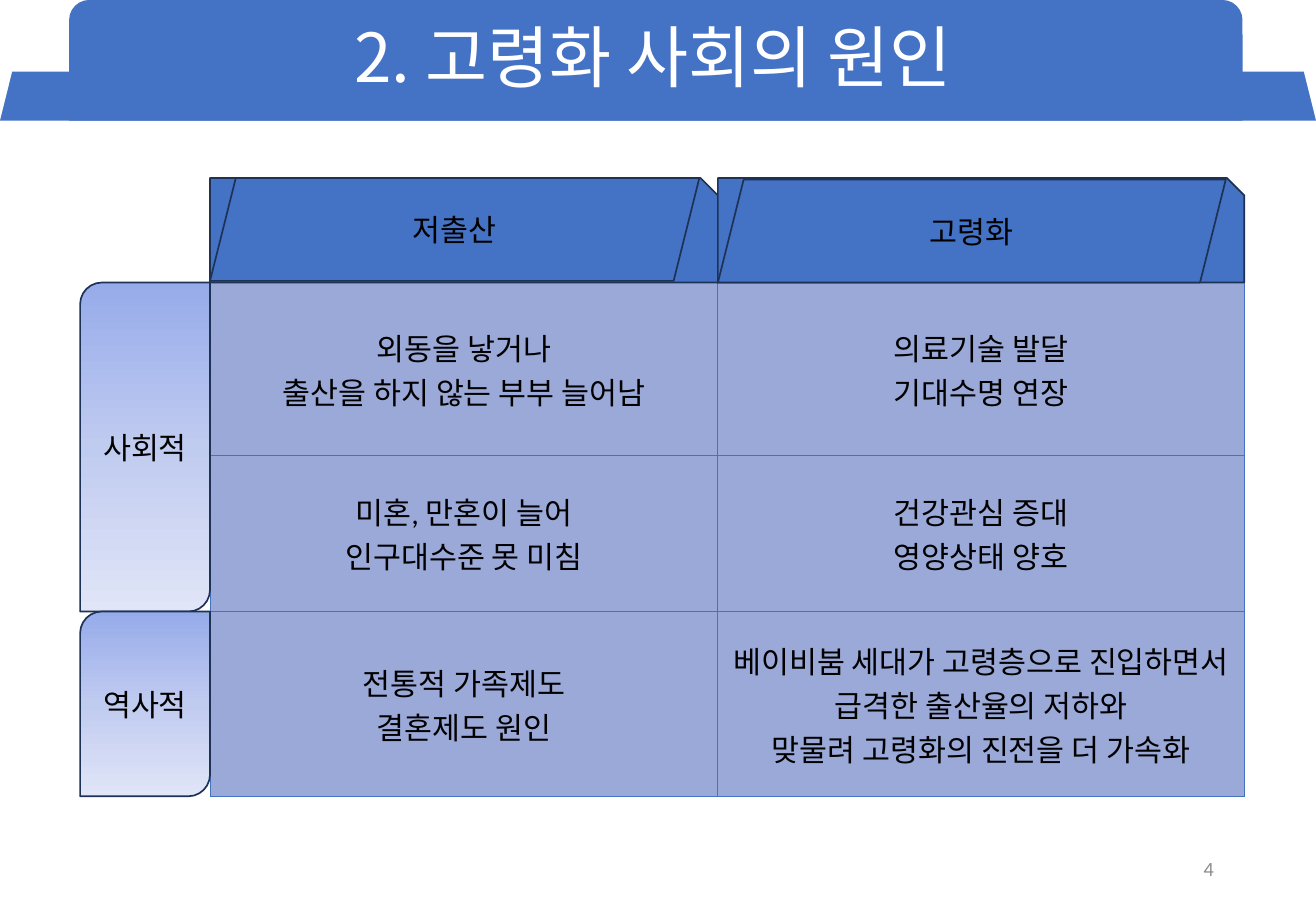
from copy import deepcopy

from lxml import etree
from pptx import Presentation
from pptx.dml.color import RGBColor
from pptx.enum.shapes import MSO_SHAPE
from pptx.enum.text import MSO_ANCHOR, PP_ALIGN
from pptx.oxml.ns import qn
from pptx.util import Pt

BLUE = RGBColor(0x44, 0x72, 0xC4)
NAVY = RGBColor(0x1E, 0x32, 0x56)
PERIWINKLE = RGBColor(0x9B, 0xA9, 0xD9)
WHITE = RGBColor(0xFF, 0xFF, 0xFF)
BLACK = RGBColor(0, 0, 0)
GRAY = RGBColor(0x8C, 0x8C, 0x8C)
LABEL_STOPS = [
    (0, RGBColor(0x96, 0xAB, 0xEA)),
    (0.5, RGBColor(0xC0, 0xCB, 0xF0)),
    (1, RGBColor(0xE0, 0xE5, 0xF7)),
]
KOREAN = "Noto Sans CJK KR"
LATIN = "Calibri"
CENTER, RIGHT = PP_ALIGN.CENTER, PP_ALIGN.RIGHT
MIDDLE = MSO_ANCHOR.MIDDLE
TRAPEZOID = MSO_SHAPE.TRAPEZOID
ROUND_TOP = MSO_SHAPE.ROUND_2_SAME_RECTANGLE
SNIP = MSO_SHAPE.SNIP_1_RECTANGLE
PARALLELOGRAM = MSO_SHAPE.PARALLELOGRAM
ROUND_DIAGONAL = MSO_SHAPE.ROUND_2_DIAG_RECTANGLE

TABLE_LEFT, TABLE_TOP = 124.5, 167.5
COLUMN_WIDTHS = [301, 312]
ROW_HEIGHTS = [102.5, 92.5, 109.5]
HEADER_TOP, HEADER_HEIGHT = 105.5, 62
LABEL_LEFT, LABEL_WIDTH = 47.5, 77

CAUSES = [
    ["외동을 낳거나\n출산을 하지 않는 부부 늘어남", "의료기술 발달\n기대수명 연장"],
    ["미혼, 만혼이 늘어\n인구대수준 못 미침", "건강관심 증대\n영양상태 양호"],
    ["전통적 가족제도\n결혼제도 원인",
     "베이비붐 세대가 고령층으로 진입하면서 급격한 출산율의 저하와\n맞물려 고령화의 진전을 더 가속화"],
]


def write(frame, text, size=18, font=KOREAN, color=BLACK, align=CENTER, spacing=1.0):
    frame.text = text
    frame.word_wrap = True
    for paragraph in frame.paragraphs:
        paragraph.alignment = align
        paragraph.line_spacing = spacing
        for run in paragraph.runs:
            run.font.size = Pt(size)
            run.font.name = font
            run.font.color.rgb = color
            east_asian = etree.Element(qn("a:ea"), typeface=KOREAN)
            run.font._element.find(qn("a:latin")).addnext(east_asian)


def add_block(kind, left, top, width, height, line=NAVY):
    block = slide.shapes.add_shape(kind, Pt(left), Pt(top), Pt(width), Pt(height))
    block.shadow.inherit = False
    block.fill.solid()
    block.fill.fore_color.rgb = BLUE
    block.line.width = Pt(1)
    if line is None:
        block.line.fill.background()
    else:
        block.line.color.rgb = line
    block.text_frame.vertical_anchor = MIDDLE
    return block


prs = Presentation()
prs.slide_width, prs.slide_height = Pt(780), Pt(540)
slide = prs.slides.add_slide(prs.slide_layouts[5])

title = slide.shapes.title
title.left, title.top, title.width, title.height = Pt(47.5), Pt(0), Pt(679), Pt(71.5)
title.text_frame.vertical_anchor = MIDDLE
write(title.text_frame, "2. 고령화 사회의 원인", size=40, color=WHITE, spacing=0.9)

ribbon = add_block(TRAPEZOID, 0, 42.5, 780, 29, line=None)
banner = add_block(ROUND_TOP, 41, 0, 695.5, 71.5, line=None)
for backdrop in (ribbon, banner):
    title._element.addprevious(backdrop._element)

causes_frame = slide.shapes.add_table(
    len(ROW_HEIGHTS), len(COLUMN_WIDTHS), Pt(TABLE_LEFT), Pt(TABLE_TOP),
    Pt(sum(COLUMN_WIDTHS)), Pt(sum(ROW_HEIGHTS)))
causes = causes_frame.table
causes.first_row = causes.horz_banding = False
for column, width in zip(causes.columns, COLUMN_WIDTHS):
    column.width = Pt(width)
for row, height, texts in zip(causes.rows, ROW_HEIGHTS, CAUSES):
    row.height = Pt(height)
    for cell, text in zip(row.cells, texts):
        cell.vertical_anchor = MIDDLE
        write(cell.text_frame, text, font=LATIN)
        properties = cell._tc.get_or_add_tcPr()
        for side in ("a:lnL", "a:lnR", "a:lnT", "a:lnB"):
            border = etree.SubElement(properties, qn(side), w=str(Pt(0.5)))
            solid = etree.SubElement(border, qn("a:solidFill"))
            etree.SubElement(solid, qn("a:srgbClr"), val=str(BLUE))
        cell.fill.solid()
        cell.fill.fore_color.rgb = PERIWINKLE

page_number = slide.shapes.add_textbox(Pt(551), Pt(500.5), Pt(175.5), Pt(29))
page_number.text_frame.vertical_anchor = MIDDLE
write(page_number.text_frame, "4", size=12, font=LATIN, color=GRAY, align=RIGHT)

header_left = TABLE_LEFT
for heading, width, drop in zip(["저출산", "고령화"], COLUMN_WIDTHS, [0, 1]):
    add_block(SNIP, header_left, HEADER_TOP, width, HEADER_HEIGHT)
    header = add_block(PARALLELOGRAM, header_left, HEADER_TOP + drop, width - 11, HEADER_HEIGHT - 1)
    write(header.text_frame, heading)
    header_left += width

label_top = TABLE_TOP
for category, height in [("사회적", sum(ROW_HEIGHTS[:2])), ("역사적", ROW_HEIGHTS[2])]:
    label = add_block(ROUND_DIAGONAL, LABEL_LEFT, label_top, LABEL_WIDTH, height)
    label.fill.gradient()
    label.fill.gradient_angle = 270
    first_stop = label.fill.gradient_stops[0]._gs
    first_stop.addnext(deepcopy(first_stop))
    for stop, (position, color) in zip(label.fill.gradient_stops, LABEL_STOPS):
        stop.position = position
        stop.color.rgb = color
    write(label.text_frame, category)
    label_top += height

prs.save("out.pptx")
